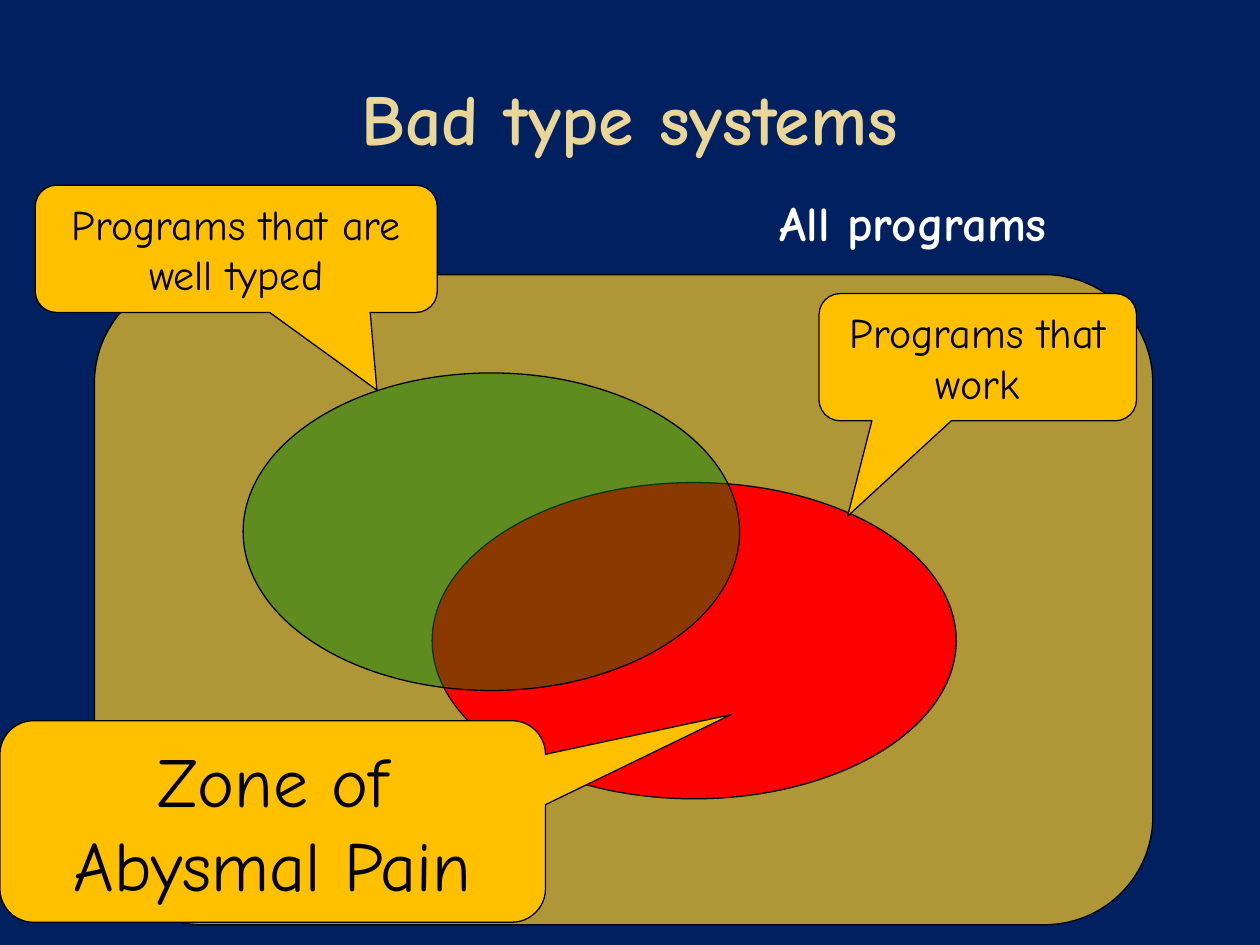
"""Build the "Bad type systems" Venn diagram slide."""
import pptx
import pptx.dml.color
import pptx.enum.shapes
import pptx.enum.text
import pptx.oxml
import pptx.oxml.ns
import pptx.util

Inches = pptx.util.Inches
Pt = pptx.util.Pt
SHAPE = pptx.enum.shapes.MSO_SHAPE
ALIGN = pptx.enum.text.PP_ALIGN
ANCHOR = pptx.enum.text.MSO_ANCHOR

THEME = {
    "font": "Comic Neue",
    "background": "002060",
    "title": "EAD696",
    "label": "FFFFFF",
    "universe": "AF9738",
    "working": "FF0000",
    "typed": "008000",
    "callout": "FFC000",
    "ink": "000000",
    "line": 0.75,
    "title_size": 41,
    "label_size": 28,
    "note_size": 24,
    "pain_size": 40,
}

TITLE = ("Bad type systems", (0.5, 0.3, 9, 1.25))
LABEL = ("All programs", (6.09, 1.48, 2.57, 0.57))
SETS = [
    (SHAPE.ROUNDED_RECTANGLE, (0.75, 2.18, 8.4, 5.16), "universe", 100),
    (SHAPE.OVAL, (3.43, 3.83, 4.16, 2.51), "working", 100),
    (SHAPE.OVAL, (1.93, 2.96, 3.94, 2.52), "typed", 46),
]
CALLOUTS = [
    ("Programs that work", (6.5, 2.33, 2.52, 1.01), (-0.41, 1.25), "note_size"),
    ("Programs that are well typed", (0.28, 1.47, 3.19, 1.01), (0.35, 1.11), "note_size"),
    ("Zone of Abysmal Pain", (0, 5.72, 4.33, 1.6), (0.84, -0.53), "pain_size"),
]


def rgb(name):
    """Return the theme colour with this name."""
    return pptx.dml.color.RGBColor.from_string(THEME[name])


def add_outlined(s, kind, box, fill, opacity=100):
    """Add a filled shape with the common thin outline."""
    sp = s.shapes.add_shape(kind, *map(Inches, box))
    sp.shadow.inherit = False
    sp.fill.solid()
    sp.fill.fore_color.rgb = rgb(fill)
    sp.line.color.rgb = rgb("ink")
    sp.line.width = Pt(THEME["line"])
    if opacity < 100:
        clr = sp.fill._xPr.find(".//" + pptx.oxml.ns.qn("a:srgbClr"))
        alpha = pptx.oxml.parse_xml(
            f'<a:alpha {pptx.oxml.ns.nsdecls("a")} val="{opacity * 1000}"/>')
        clr.append(alpha)
    return sp


def write(sp, text, size, color, bold=False, align=ALIGN.CENTER,
          anchor=ANCHOR.MIDDLE, wrap=True):
    """Write one run of text into a shape."""
    tf = sp.text_frame
    tf.word_wrap = wrap
    tf.vertical_anchor = anchor
    p = tf.paragraphs[0]
    p.alignment = align
    r = p.add_run()
    r.text = text
    r.font.name = THEME["font"]
    r.font.size = Pt(THEME[size])
    r.font.bold = bold
    r.font.color.rgb = rgb(color)


def add_text(s, content, size, color, **layout):
    """Add a bold text box."""
    text, box = content
    sp = s.shapes.add_textbox(*map(Inches, box))
    write(sp, text, size, color, bold=True, **layout)


def main():
    """Assemble and save the slide."""
    prs = pptx.Presentation()
    prs.slide_width, prs.slide_height = Inches(10), Inches(7.5)
    s = prs.slides.add_slide(prs.slide_layouts[6])
    s.background.fill.solid()
    s.background.fill.fore_color.rgb = rgb("background")

    for kind, box, fill, opacity in SETS:
        add_outlined(s, kind, box, fill, opacity)
    add_text(s, TITLE, "title_size", "title")
    add_text(s, LABEL, "label_size", "label",
             align=ALIGN.LEFT, anchor=ANCHOR.TOP, wrap=False)
    for text, box, tip, size in CALLOUTS:
        sp = add_outlined(s, SHAPE.ROUNDED_RECTANGULAR_CALLOUT, box, "callout")
        sp.adjustments[0], sp.adjustments[1] = tip
        write(sp, text, size, "ink")

    prs.save("out.pptx")


if __name__ == "__main__":
    main()
